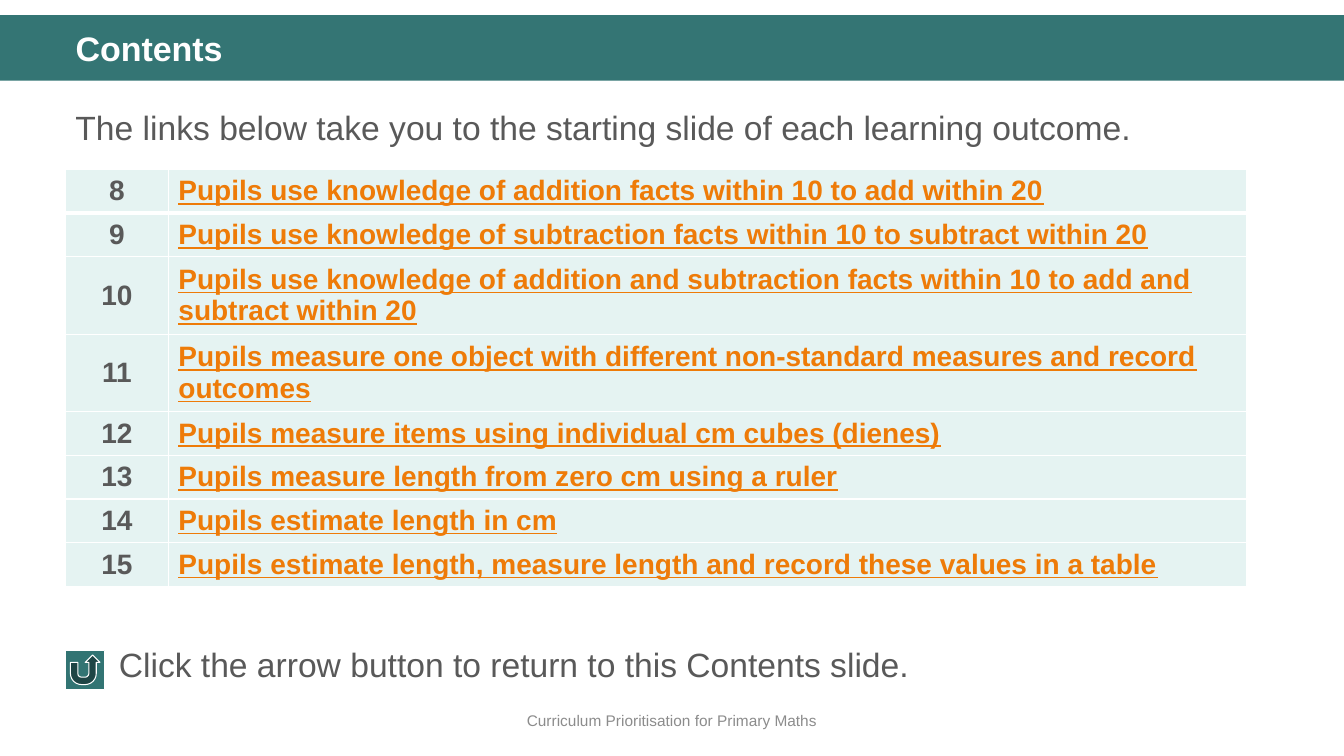
from dataclasses import dataclass

from pptx import Presentation
from pptx.dml.color import RGBColor
from pptx.enum.shapes import MSO_SHAPE
from pptx.enum.text import MSO_ANCHOR, MSO_AUTO_SIZE, PP_ALIGN
from pptx.oxml import parse_xml
from pptx.oxml.ns import nsdecls
from pptx.util import Inches, Pt

# Content
TITLE = "Contents"
INTRO = "The links below take you to the starting slide of each learning outcome."
FIRST_NUMBER = 8
OUTCOMES = [
    "Pupils use knowledge of addition facts within 10 to add within 20",
    "Pupils use knowledge of subtraction facts within 10 to subtract within 20",
    "Pupils use knowledge of addition and subtraction facts within 10 to add and subtract within 20",
    "Pupils measure one object with different non-standard measures and record outcomes",
    "Pupils measure items using individual cm cubes (dienes)",
    "Pupils measure length from zero cm using a ruler",
    "Pupils estimate length in cm",
    "Pupils estimate length, measure length and record these values in a table",
]
RETURN_HINT = "Click the arrow button to return to this Contents slide."
FOOTER = "Curriculum Prioritisation for Primary Maths"


@dataclass(frozen=True)
class Theme:
    font: str = "Arial"
    band: str = "347574"
    button: str = "327473"
    cell: str = "E5F3F2"
    text: str = "595959"
    link: str = "EE7B08"
    footer: str = "8C8C8C"
    white: str = "FFFFFF"
    title_size: float = 24.3
    body_size: float = 24
    table_size: float = 20
    footer_size: float = 11


THEME = Theme()

# Grid, in inches
WIDTH, HEIGHT = 13.33, 7.5
LEFT = 0.65
CONTENT_WIDTH = WIDTH - LEFT - 0.5
COLUMNS = (1.02, 10.69)
ROW = 0.41
BUTTON = 0.39


def box(left, top, width, height):
    return [Inches(length) for length in (left, top, width, height)]


def write(frame, text, size=THEME.body_size, color=THEME.text, bold=False,
          underline=False, align=PP_ALIGN.LEFT, spacing=None):
    paragraph = frame.paragraphs[0]
    paragraph.alignment = align
    paragraph.line_spacing = spacing
    run = paragraph.add_run()
    run.text = text
    font = run.font
    font.name, font.size = THEME.font, Pt(size)
    font.bold, font.underline = bold, underline
    font.color.rgb = RGBColor.from_string(color)


def add_text(slide, place, text, anchor=MSO_ANCHOR.TOP, **style):
    frame = slide.shapes.add_textbox(*box(*place)).text_frame
    frame.word_wrap = True
    frame.vertical_anchor = anchor
    write(frame, text, **style)


def add_plain_shape(slide, kind, place, color):
    shape = slide.shapes.add_shape(kind, *box(*place))
    shape.shadow.inherit = False
    shape.fill.solid()
    shape.fill.fore_color.rgb = RGBColor.from_string(color)
    shape.line.fill.background()
    return shape


def format_cell(cell, bottom_width):
    cell.vertical_anchor = MSO_ANCHOR.MIDDLE
    properties = cell._tc.get_or_add_tcPr()
    widths = {"lnL": 1, "lnR": 1, "lnT": 1, "lnB": bottom_width}
    for side, width in widths.items():
        properties.append(parse_xml(
            f'<a:{side} {nsdecls("a")} w="{Pt(width)}"><a:solidFill>'
            f'<a:srgbClr val="{THEME.white}"/></a:solidFill></a:{side}>'))
    cell.fill.solid()
    cell.fill.fore_color.rgb = RGBColor.from_string(THEME.cell)


def add_outcomes(slide):
    place = box(LEFT, 1.68, sum(COLUMNS), ROW * len(OUTCOMES))
    table = slide.shapes.add_table(len(OUTCOMES), len(COLUMNS), *place).table
    for column, width in zip(table.columns, COLUMNS):
        column.width = Inches(width)
    for index, outcome in enumerate(OUTCOMES):
        table.rows[index].height = Inches(ROW)
        number_cell, outcome_cell = table.rows[index].cells
        for cell in (number_cell, outcome_cell):
            format_cell(cell, bottom_width=3 if index == 0 else 1)
        write(number_cell.text_frame, str(FIRST_NUMBER + index),
              size=THEME.table_size, bold=True, align=PP_ALIGN.CENTER)
        write(outcome_cell.text_frame, outcome, size=THEME.table_size,
              color=THEME.link, bold=True, underline=True)


def main():
    presentation = Presentation()
    presentation.slide_width, presentation.slide_height = Inches(WIDTH), Inches(HEIGHT)
    slide = presentation.slides.add_slide(presentation.slide_layouts[5])

    # Title on its band, with the band sent to the back
    band = add_plain_shape(slide, MSO_SHAPE.RECTANGLE, (0, 0.15, WIDTH, 0.65), THEME.band)
    slide.shapes._spTree.insert(2, band._element)
    title = slide.shapes.title
    title.left, title.top, title.width, title.height = box(LEFT, 0.27, CONTENT_WIDTH, 0.47)
    title.text_frame.auto_size = MSO_AUTO_SIZE.NONE
    title.text_frame.vertical_anchor = MSO_ANCHOR.TOP
    write(title.text_frame, TITLE, size=THEME.title_size, color=THEME.white,
          bold=True, spacing=0.9)

    # Introduction and learning outcomes
    add_text(slide, (LEFT, 0.93, CONTENT_WIDTH, 0.6), INTRO, spacing=1.2)
    add_outcomes(slide)

    # Return button and its hint
    button = add_plain_shape(slide, MSO_SHAPE.ACTION_BUTTON_RETURN,
                             (LEFT, 6.45, BUTTON, BUTTON), THEME.button)
    button.line.color.rgb = RGBColor.from_string(THEME.white)
    button.line.width = Pt(0.75)
    add_text(slide, (1.08, 6.34, 11.32, 0.5), RETURN_HINT)

    # Footer
    add_text(slide, (0, 6.95, WIDTH, 0.4), FOOTER, anchor=MSO_ANCHOR.MIDDLE,
             size=THEME.footer_size, color=THEME.footer, align=PP_ALIGN.CENTER)

    presentation.save("out.pptx")


if __name__ == "__main__":
    main()
